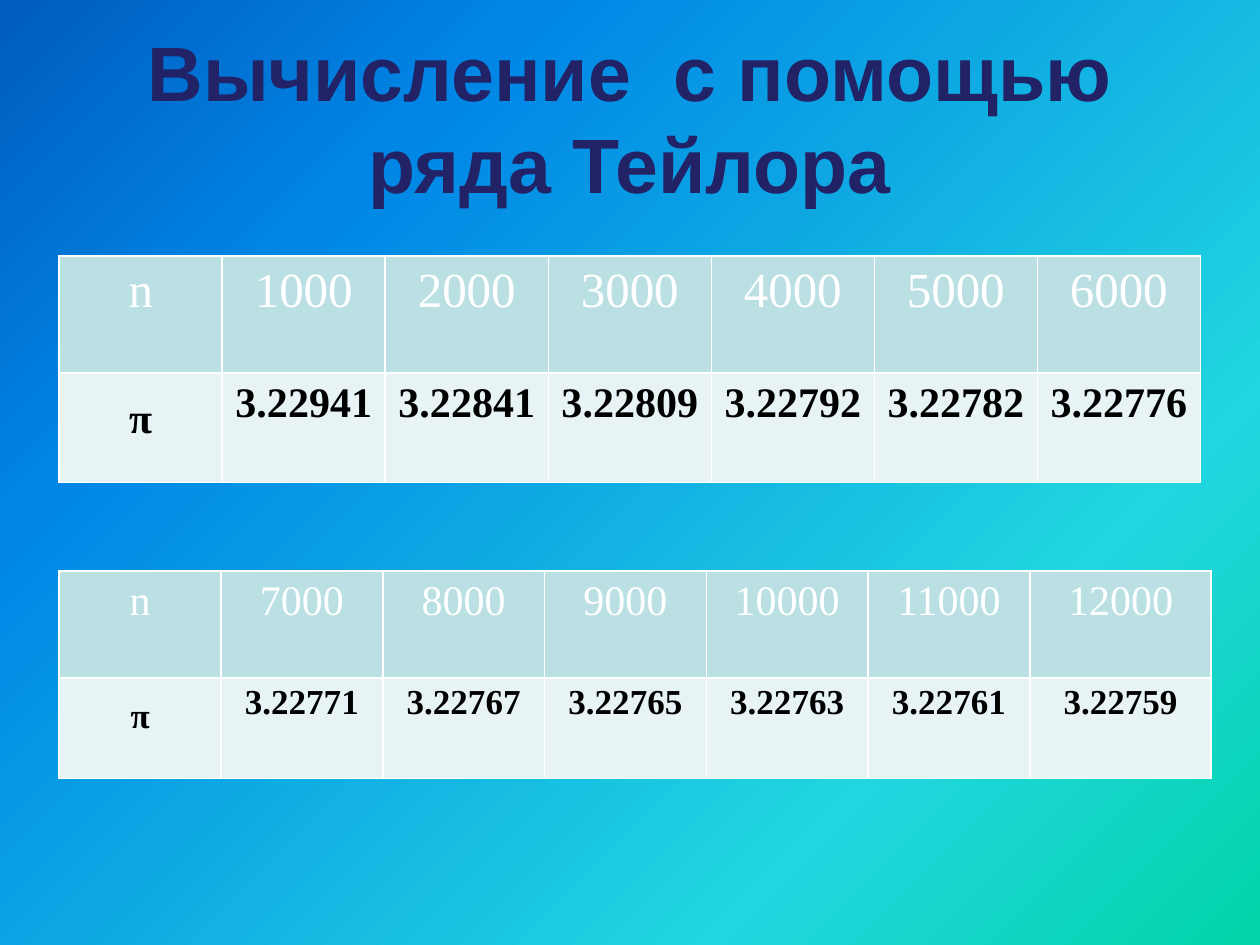
from dataclasses import dataclass

from lxml.etree import SubElement
from pptx import Presentation
from pptx.dml.color import RGBColor
from pptx.enum.text import MSO_ANCHOR, MSO_AUTO_SIZE, PP_ALIGN
from pptx.oxml import parse_xml
from pptx.oxml.ns import nsdecls, qn
from pptx.util import Inches, Pt

COLORS = {
    "title": "222267",
    "header_text": "FFFFFF",
    "value_text": "000000",
    "header_fill": "BBE0E3",
    "value_fill": "E7F3F4",
    "border": "FFFFFF",
}
BACKGROUND_STOPS = [(0, "03D4A8"), (25, "21D6E0"), (75, "0087E6"), (100, "005CBF")]
TABLE_LEFT = 0.47


@dataclass
class CellStyle:
    size: int
    color: str
    fill: str
    bold: bool


@dataclass
class SeriesTable:
    top: float
    column_widths: list[float]
    row_heights: list[float]
    header_size: int
    value_size: int
    terms: list[str]
    values: list[str]


TABLES = [
    SeriesTable(
        2.03, [1.294] * 7, [0.93, 0.87], 28, 24,
        ["1000", "2000", "3000", "4000", "5000", "6000"],
        ["3.22941", "3.22841", "3.22809", "3.22792", "3.22782", "3.22776"],
    ),
    SeriesTable(
        4.53, [1.284] * 6 + [1.44], [0.85, 0.8], 24, 20,
        ["7000", "8000", "9000", "10000", "11000", "12000"],
        ["3.22771", "3.22767", "3.22765", "3.22763", "3.22761", "3.22759"],
    ),
]


def paint_background(slide) -> None:
    fill = slide.background.fill
    fill.gradient()
    fill.gradient_angle = 135
    stop_list = next(slide.element.iter(qn("a:gsLst")))
    for stop in list(stop_list):
        stop_list.remove(stop)
    for percent, color in BACKGROUND_STOPS:
        stop = SubElement(stop_list, qn("a:gs"), pos=str(percent * 1000))
        SubElement(stop, qn("a:srgbClr"), val=color)


def add_run(paragraph, text: str, font_name: str, size: int, color: str, bold: bool) -> None:
    run = paragraph.add_run()
    run.text = text
    run.font.name = font_name
    run.font.size = Pt(size)
    run.font.bold = bold
    run.font.color.rgb = RGBColor.from_string(COLORS[color])


def add_title(slide, text: str) -> None:
    title = slide.shapes.title
    title.left, title.top = Inches(0.5), Inches(0.3)
    title.width, title.height = Inches(9), Inches(1.25)
    frame = title.text_frame
    frame.word_wrap = True
    frame.auto_size = MSO_AUTO_SIZE.NONE
    frame.vertical_anchor = MSO_ANCHOR.MIDDLE
    paragraph = frame.paragraphs[0]
    paragraph.alignment = PP_ALIGN.CENTER
    paragraph.line_spacing = 1.0
    add_run(paragraph, text, "Arial", 44, "title", True)


def add_borders(cell) -> None:
    """Give all four sides a 1 pt line; the lines must precede the fill."""
    properties = cell._tc.get_or_add_tcPr()
    for index, side in enumerate(("lnL", "lnR", "lnT", "lnB")):
        properties.insert(index, parse_xml(
            f'<a:{side} {nsdecls("a")} w="{Pt(1)}"><a:solidFill>'
            f'<a:srgbClr val="{COLORS["border"]}"/></a:solidFill></a:{side}>'
        ))


def fill_cell(cell, text: str, style: CellStyle, line_spacing: float) -> None:
    cell.margin_left = cell.margin_right = Inches(0.07)
    cell.margin_top = cell.margin_bottom = 0
    cell.fill.solid()
    cell.fill.fore_color.rgb = RGBColor.from_string(COLORS[style.fill])
    add_borders(cell)
    paragraph = cell.text_frame.paragraphs[0]
    paragraph.alignment = PP_ALIGN.CENTER
    paragraph.line_spacing = line_spacing
    add_run(paragraph, text, "Times New Roman", style.size, style.color, style.bold)


def add_series_table(slide, series: SeriesTable) -> None:
    widths, heights = series.column_widths, series.row_heights
    table = slide.shapes.add_table(
        len(heights), len(widths), Inches(TABLE_LEFT), Inches(series.top),
        Inches(sum(widths)), Inches(sum(heights)),
    ).table
    for column, width in zip(table.columns, widths):
        column.width = Inches(width)
    for row, height in zip(table.rows, heights):
        row.height = Inches(height)

    header = CellStyle(series.header_size, "header_text", "header_fill", False)
    value = CellStyle(series.value_size, "value_text", "value_fill", True)
    rows = [(["n"] + series.terms, header), (["π"] + series.values, value)]
    for row_index, (texts, style) in enumerate(rows):
        for column_index, text in enumerate(texts):
            line_spacing = 1.5 if text == "π" else 1.15
            fill_cell(table.cell(row_index, column_index), text, style, line_spacing)


def main() -> None:
    presentation = Presentation()
    presentation.slide_width = Inches(10)
    presentation.slide_height = Inches(7.5)
    slide = presentation.slides.add_slide(presentation.slide_layouts[5])
    paint_background(slide)
    add_title(slide, "Вычисление  с помощью ряда Тейлора")
    for series in TABLES:
        add_series_table(slide, series)
    presentation.save("out.pptx")


if __name__ == "__main__":
    main()
